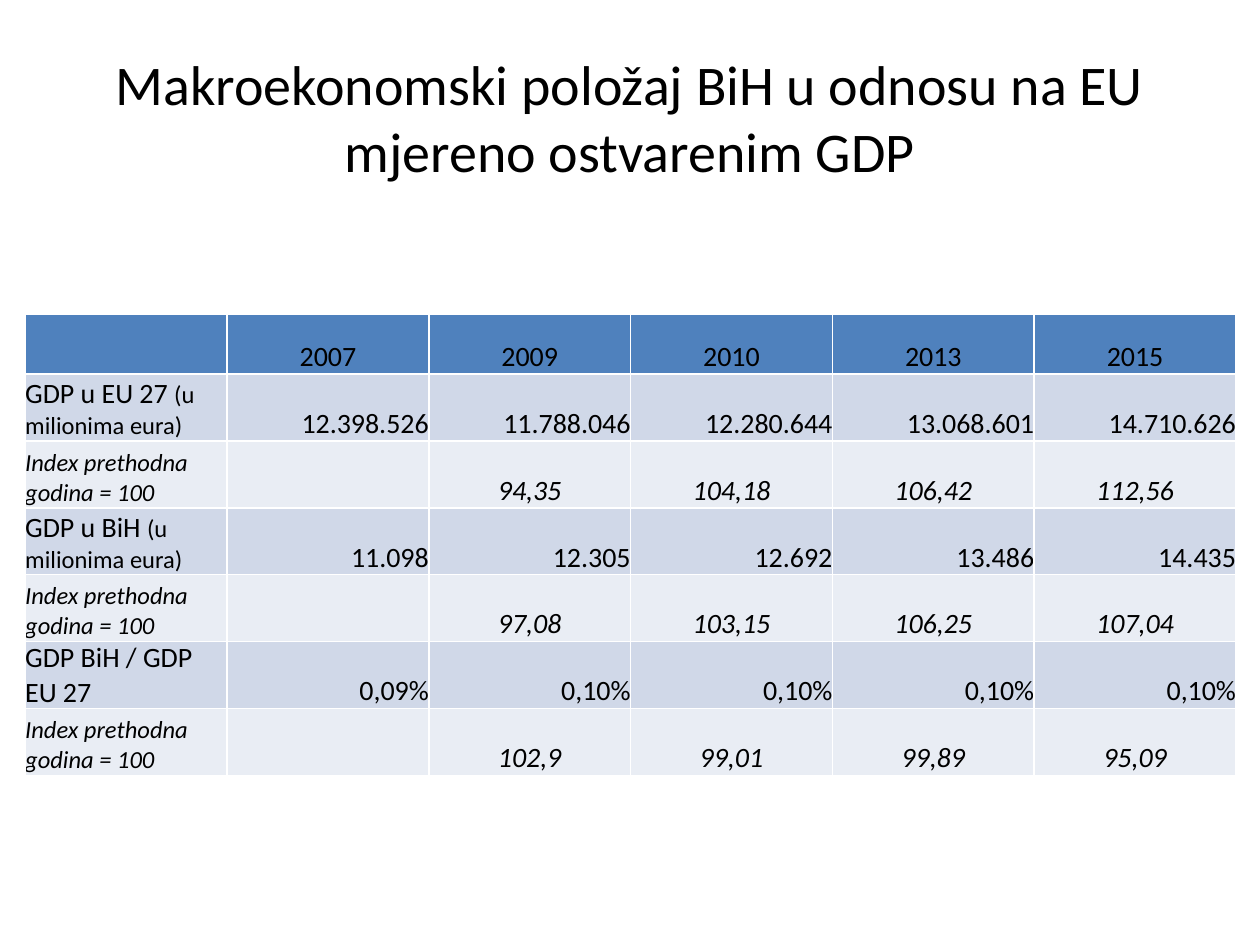
"""Build a slide comparing the GDP of BiH with that of the EU."""
from dataclasses import dataclass

from pptx import Presentation
from pptx.dml.color import RGBColor
from pptx.enum import text as t
from pptx.util import Inches, Pt

BLACK = RGBColor(0x00, 0x00, 0x00)
BLUE = RGBColor(0x4F, 0x81, 0xBD)
BAND = RGBColor(0xD0, 0xD8, 0xE8)
PALE = RGBColor(0xE9, 0xED, 0xF4)

LEFT, MID, RIGHT = t.PP_ALIGN.LEFT, t.PP_ALIGN.CENTER, t.PP_ALIGN.RIGHT


@dataclass
class Row:
    label: str
    cells: list[str]
    fill: RGBColor = BAND
    align: t.PP_ALIGN = RIGHT
    unit: str = ""
    size: int = 16
    slant: bool = False


def index(*cells: str) -> Row:
    return Row("Index prethodna godina = 100", ["", *cells], PALE, MID, size=14, slant=True)


UNIT = "(u milionima eura)"
ROWS = [
    Row("", ["2007", "2009", "2010", "2013", "2015"], BLUE, MID),
    Row("GDP u EU 27 ", ["12.398.526", "11.788.046", "12.280.644", "13.068.601", "14.710.626"], unit=UNIT),
    index("94,35", "104,18", "106,42", "112,56"),
    Row("GDP u BiH ", ["11.098", "12.305", "12.692", "13.486", "14.435"], unit=UNIT),
    index("97,08", "103,15", "106,25", "107,04"),
    Row("GDP BiH / GDP EU 27", ["0,09%"] + ["0,10%"] * 4),
    index("102,9", "99,01", "99,89", "95,09"),
]


def write(frame, words: str, *, size: int = 16, align=LEFT, slant: bool = False) -> None:
    para = frame.paragraphs[0]
    para.alignment = align
    if not words:
        return
    run = para.add_run()
    run.text = words
    font = run.font
    font.name, font.size = "Calibri", Pt(size)
    font.bold, font.italic = False, slant
    font.color.rgb = BLACK


def draw_title(slide, words: str) -> None:
    box = slide.shapes.add_textbox(Inches(0.5), Inches(0.3), Inches(9), Inches(1.25))
    frame = box.text_frame
    frame.word_wrap = True
    frame.vertical_anchor = t.MSO_ANCHOR.MIDDLE
    write(frame, words, size=32, align=MID)


def draw_row(cells, row: Row) -> None:
    for cell in cells:
        cell.fill.solid()
        cell.fill.fore_color.rgb = row.fill
        cell.vertical_anchor = t.MSO_ANCHOR.BOTTOM
        cell.margin_left = cell.margin_right = cell.margin_top = cell.margin_bottom = 0
    head, *rest = cells
    write(head.text_frame, row.label, size=row.size, slant=row.slant)
    write(head.text_frame, row.unit, size=14)
    for cell, words in zip(rest, row.cells):
        write(cell.text_frame, words, align=row.align, slant=row.slant)


def draw_table(slide, rows: list[Row]) -> None:
    cols = len(rows[0].cells) + 1
    frame = slide.shapes.add_table(
        len(rows), cols, Inches(0.2), Inches(2.49), Inches(9.61), Inches(3.66))
    table = frame.table
    for i, row in enumerate(rows):
        table.rows[i].height = Inches(0.53 if i else 0.48)
        draw_row(list(table.rows[i].cells), row)


def main() -> None:
    deck = Presentation()
    deck.slide_width, deck.slide_height = Inches(10), Inches(7.5)
    slide = deck.slides.add_slide(deck.slide_layouts[6])
    draw_title(slide, "Makroekonomski položaj BiH u odnosu na EU mjereno ostvarenim GDP")
    draw_table(slide, ROWS)
    deck.save("out.pptx")


if __name__ == "__main__":
    main()
